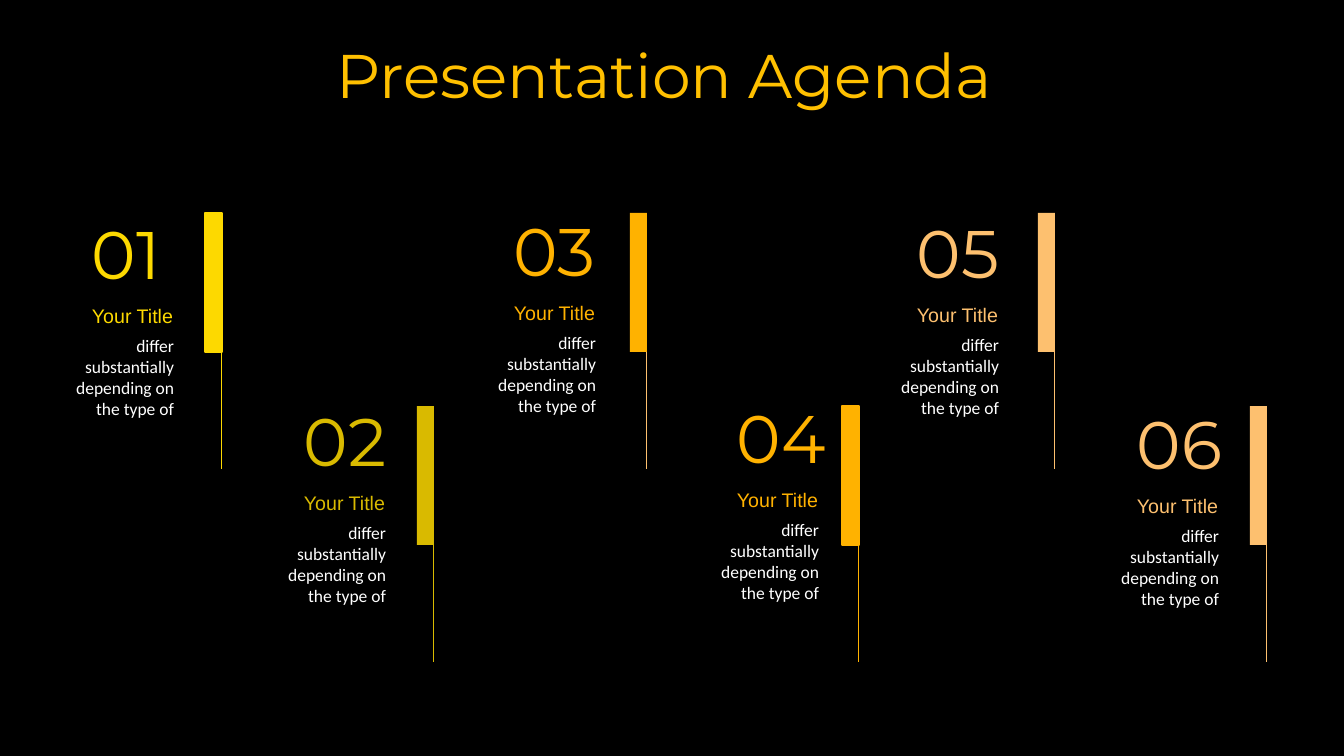
from dataclasses import dataclass

from lxml import etree
from pptx import Presentation
from pptx import util as u
from pptx.dml.color import RGBColor
from pptx.enum import shapes, text
from pptx.oxml.ns import qn

EMU_PER_PX = 914400 / 100.8


@dataclass(frozen=True)
class Theme:
    backdrop: str = "000000"
    heading: str = "FFC000"
    body: str = "FFFFFF"
    lemon: str = "FDD900"
    olive: str = "D9BA00"
    amber: str = "FFB200"
    peach: str = "FDC06F"
    display_font: str = "Montserrat"
    label_font: str = "Arial"
    body_font: str = "Calibri"
    heading_size: float = 44
    number_size: float = 48
    label_size: float = 14
    body_size: float = 12.5
    hairline: float = 0.5
    outline: float = 1


@dataclass(frozen=True)
class AgendaItem:
    bar_x: int
    bar_y: int
    text_x: int
    text_y: int
    color: str
    stem_color: str
    outlined: bool = False


THEME = Theme()
UPPER, LOWER = 213, 406
AGENDA = [
    AgendaItem(205, UPPER, 82, 207, THEME.lemon, THEME.lemon, True),
    AgendaItem(417, LOWER, 294, 394, THEME.olive, THEME.olive),
    AgendaItem(630, UPPER, 504, 204, THEME.amber, THEME.peach),
    AgendaItem(842, LOWER, 727, 391, THEME.amber, THEME.amber, True),
    AgendaItem(1038, UPPER, 907, 206, THEME.peach, THEME.peach),
    AgendaItem(1250, LOWER, 1127, 397, THEME.peach, THEME.peach),
]
DESCRIPTION = ["differ substantially", "depending on the type of"]


def px(length):
    return u.Emu(round(length * EMU_PER_PX))


def rgb(color):
    return RGBColor.from_string(color)


def add_block(parent, box, color, outlined=False):
    block = parent.add_shape(shapes.MSO_SHAPE.RECTANGLE, *map(px, box))
    block.shadow.inherit = False
    block.fill.solid()
    block.fill.fore_color.rgb = rgb(color)
    if outlined:
        block.line.color.rgb = rgb(color)
        block.line.width = u.Pt(THEME.outline)
    else:
        block.line.fill.background()


def add_copy(slide, box, lines, font, size, color, paragraph_format=None, frame_format=None):
    frame = slide.shapes.add_textbox(*map(px, box)).text_frame
    frame.word_wrap = True
    for name, value in (frame_format or {}).items():
        setattr(frame, name, value)
    for index, line in enumerate(lines):
        paragraph = frame.paragraphs[0] if index == 0 else frame.add_paragraph()
        for name, value in (paragraph_format or {}).items():
            setattr(paragraph, name, value)
        run = paragraph.add_run()
        run.text = line
        for name, value in {"name": font, "size": u.Pt(size)}.items():
            setattr(run.font, name, value)
        run.font.color.rgb = rgb(color)


def add_heading(slide, box):
    add_copy(slide, box, ["Presentation Agenda "], THEME.display_font,
             THEME.heading_size, THEME.heading,
             {"alignment": text.PP_ALIGN.CENTER, "line_spacing": 0.9})


def add_marker(slide, item, box):
    left, top, width, height = box
    marker = slide.shapes.add_group_shape().shapes
    stem_x = left + width - 1
    stem = marker.add_connector(shapes.MSO_CONNECTOR.STRAIGHT, px(stem_x), px(top + 2),
                                px(stem_x), px(top + 256))
    stem.line.color.rgb = rgb(item.stem_color)
    stem.line.width = u.Pt(THEME.hairline)
    etree.SubElement(stem.element.spPr, qn("a:effectLst"))
    add_block(marker, (left, top, width, height), item.color, item.outlined)


def add_entry(slide, number, color, box):
    left, top, width, height = box
    fitted = {"auto_size": text.MSO_AUTO_SIZE.SHAPE_TO_FIT_TEXT}
    padded = fitted | {"margin_left": px(13), "margin_right": px(13),
                       "margin_top": px(7), "margin_bottom": px(7)}
    add_copy(slide, (left, top, width, 92), [f"{number:02d}"], THEME.display_font,
             THEME.number_size, color, frame_format=fitted)
    add_copy(slide, (left, top + 92, width, 34), ["Your Title"], THEME.label_font,
             THEME.label_size, color, frame_format=fitted)
    add_copy(slide, (left - 22, top + 121, width + 16, height - 121), DESCRIPTION,
             THEME.body_font, THEME.body_size, THEME.body,
             {"alignment": text.PP_ALIGN.RIGHT}, padded)


def build_agenda(deck):
    slide = deck.slides.add_slide(deck.slide_layouts[6])
    add_block(slide.shapes, (0, 0, 1344, 756), THEME.backdrop)
    add_heading(slide, (93, 40, 1159, 81))
    for item in AGENDA:
        add_marker(slide, item, (item.bar_x, item.bar_y, 17, 139))
    for number, item in enumerate(AGENDA, 1):
        add_entry(slide, number, item.color, (item.text_x, item.text_y, 111, 220))


def main():
    deck = Presentation()
    deck.slide_width, deck.slide_height = px(1344), px(756)
    build_agenda(deck)
    deck.save("out.pptx")


if __name__ == "__main__":
    main()
